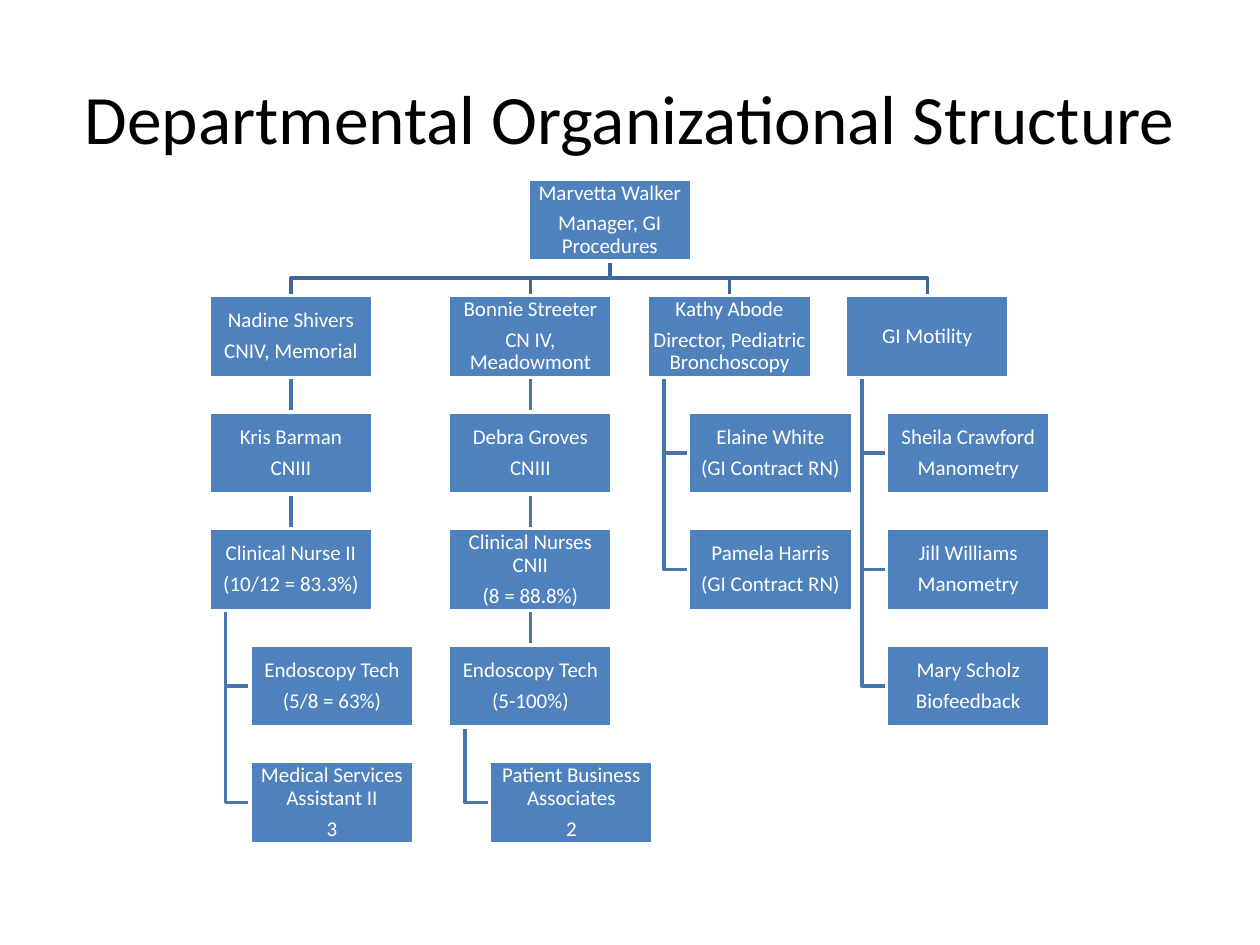
"""Builds the departmental organization chart slide."""
from dataclasses import dataclass

from lxml.etree import SubElement
from pptx import Presentation
from pptx.dml.color import RGBColor
from pptx.enum.shapes import MSO_CONNECTOR, MSO_SHAPE
from pptx.enum.text import MSO_ANCHOR, PP_ALIGN
from pptx.oxml.ns import qn
from pptx.util import Inches, Pt


@dataclass(frozen=True)
class Theme:
    font: str = "Calibri"
    title_size: float = 39.6
    box_size: float = 12
    para_gap: float = 4.6
    line_width: float = 2
    text: RGBColor = RGBColor.from_string("000000")
    box_text: RGBColor = RGBColor.from_string("FFFFFF")
    box_fill: RGBColor = RGBColor.from_string("4F81BD")
    box_line: RGBColor = RGBColor.from_string("FFFFFF")
    main_link: RGBColor = RGBColor.from_string("3F6797")
    sub_link: RGBColor = RGBColor.from_string("4875AC")


BOX_W, BOX_H = 1.3, 0.65
TOP, ROW_STEP = 1.42, 0.925
INDENT, TRUNK = 0.325, 0.13
ROOT_LEFT = 4.19
ROOT = ["Marvetta Walker", "Manager, GI Procedures"]
BRANCHES = [
    (1.66,
     [["Nadine Shivers", "CNIV, Memorial"],
      ["Kris Barman", "CNIII"],
      ["Clinical Nurse II", "(10/12 = 83.3%)"]],
     [["Endoscopy Tech", "(5/8 = 63%)"],
      ["Medical Services Assistant II", "3"]]),
    (3.56,
     [["Bonnie Streeter", "CN IV, Meadowmont"],
      ["Debra Groves", "CNIII"],
      ["Clinical Nurses CNII", "(8 = 88.8%)"],
      ["Endoscopy Tech", "(5-100%)"]],
     [["Patient Business Associates", "2"]]),
    (5.14,
     [["Kathy Abode", "Director, Pediatric Bronchoscopy"]],
     [["Elaine White", "(GI Contract RN)"],
      ["Pamela Harris", "(GI Contract RN)"]]),
    (6.71,
     [["GI Motility"]],
     [["Sheila Crawford", "Manometry"],
      ["Jill Williams", "Manometry"],
      ["Mary Scholz", "Biofeedback"]]),
]


def row_top(row):
    return TOP + row * ROW_STEP


class ChartSlide:
    def __init__(self, slide, theme):
        self.shapes = slide.shapes
        self.theme = theme

    def set_text(self, tf, lines, size, color):
        tf.word_wrap = True
        tf.vertical_anchor = MSO_ANCHOR.MIDDLE
        tf.text = "\n".join(lines)
        for p in tf.paragraphs:
            p.alignment = PP_ALIGN.CENTER
            for r in p.runs:
                r.font.name = self.theme.font
                r.font.size = Pt(size)
                r.font.color.rgb = color

    def title(self, text):
        sp = self.shapes.add_textbox(Inches(0.5), Inches(0.3), Inches(9), Inches(1.25))
        self.set_text(sp.text_frame, [text], self.theme.title_size, self.theme.text)

    def box(self, left, row, lines):
        sp = self.shapes.add_shape(MSO_SHAPE.RECTANGLE, Inches(left), Inches(row_top(row)),
                                   Inches(BOX_W), Inches(BOX_H))
        sp.shadow.inherit = False
        sp.fill.solid()
        sp.fill.fore_color.rgb = self.theme.box_fill
        sp.line.color.rgb = self.theme.box_line
        sp.line.width = Pt(self.theme.line_width)
        tf = sp.text_frame
        tf.margin_left = tf.margin_right = tf.margin_top = tf.margin_bottom = Inches(0.01)
        self.set_text(tf, lines, self.theme.box_size, self.theme.box_text)
        for p in tf.paragraphs:
            p.line_spacing = 0.9
            p.space_after = Pt(self.theme.para_gap)

    def elbow(self, points, color):
        start, *rest = [(Inches(x), Inches(y)) for x, y in points]
        builder = self.shapes.build_freeform(*start)
        builder.add_line_segments(rest, close=False)
        sp = builder.convert_to_shape()
        sp.shadow.inherit = False
        sp.fill.background()
        sp.line.color.rgb = color
        sp.line.width = Pt(self.theme.line_width)

    def link(self, x, top, bottom):
        cxn = self.shapes.add_connector(MSO_CONNECTOR.STRAIGHT, Inches(x), Inches(top),
                                        Inches(x), Inches(bottom))
        cxn.line.color.rgb = self.theme.sub_link
        cxn.line.width = Pt(self.theme.line_width)
        SubElement(cxn._element.spPr, qn("a:effectLst"))

    def branch_links(self, left, chain, staff):
        center, root_center = left + BOX_W / 2, ROOT_LEFT + BOX_W / 2
        root_bottom, head_top = TOP + BOX_H, row_top(1)
        middle = (root_bottom + head_top) / 2
        self.elbow([(root_center, root_bottom), (root_center, middle),
                    (center, middle), (center, head_top)], self.theme.main_link)
        for row in range(1, len(chain)):
            self.link(center, row_top(row) + BOX_H, row_top(row + 1))
        trunk, last = left + TRUNK, len(chain)
        for row in range(last + len(staff), last, -1):
            y = row_top(row) + BOX_H / 2
            self.elbow([(trunk, row_top(last) + BOX_H), (trunk, y), (left + INDENT, y)],
                       self.theme.sub_link)

    def branch_boxes(self, left, chain, staff):
        for row, lines in enumerate(chain + staff, start=1):
            self.box(left if row <= len(chain) else left + INDENT, row, lines)


def main():
    prs = Presentation()
    prs.slide_width, prs.slide_height = Inches(10), Inches(7.5)
    s = ChartSlide(prs.slides.add_slide(prs.slide_layouts[6]), Theme())
    s.title("Departmental Organizational Structure")
    for branch in BRANCHES:
        s.branch_links(*branch)
    s.box(ROOT_LEFT, 0, ROOT)
    for branch in BRANCHES:
        s.branch_boxes(*branch)
    prs.save("out.pptx")


if __name__ == "__main__":
    main()
